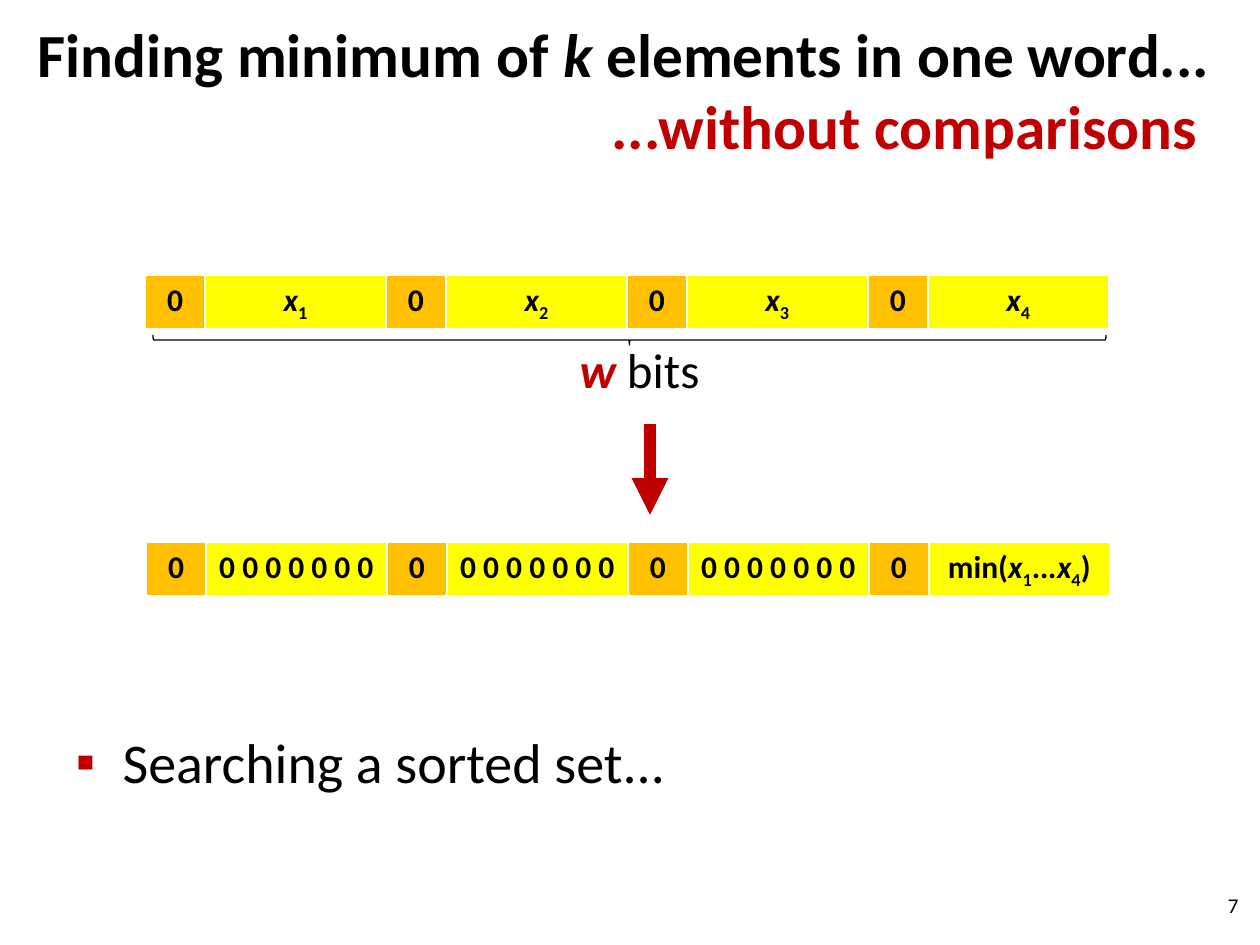
"""Build the slide on finding the minimum of k elements in one word."""
from lxml.etree import SubElement
from pptx import Presentation
from pptx.dml.color import RGBColor
from pptx.enum.shapes import MSO_CONNECTOR as Connector, MSO_SHAPE as Shape
from pptx.enum.text import MSO_ANCHOR as Anchor, MSO_AUTO_SIZE as AutoSize, PP_ALIGN as Align
from pptx.oxml.ns import qn
from pptx.util import Emu, Pt

PX_PER_INCH = 126
BLACK, WHITE, RED = "000000", "FFFFFF", "C00000"
ORANGE, YELLOW = "FFC000", "FFFF00"
FLAG_WIDTH, FIELD_WIDTH, WORD_HEIGHT = 60, 181, 52
ZERO_FIELD = [("0 0 0 0 0 0 0", {})]


def px(length):
    return Emu(round(length * 914400 / PX_PER_INCH))


def colour(value):
    return RGBColor.from_string(value)


def write(para, text, size=18, color=BLACK, bold=False, italic=False, subscript=False):
    span = para.add_run()
    span.text = text
    font = span.font
    font.name, font.size, font.bold, font.italic = "Calibri", Pt(size), bold, italic
    font.color.rgb = colour(color)
    if subscript:
        font._element.set("baseline", "-25000")


def place(box, left, top, width, height):
    box.left, box.top, box.width, box.height = map(px, (left, top, width, height))


def prepare(frame, anchor=Anchor.TOP):
    frame.word_wrap = True
    frame.auto_size = AutoSize.NONE
    frame.vertical_anchor = anchor


def add_title(page):
    title = page.shapes.title
    place(title, 25, 38, 1235, 107)
    frame = title.text_frame
    prepare(frame, Anchor.MIDDLE)
    first, second = frame.paragraphs[0], frame.add_paragraph()
    for para in (first, second):
        para.alignment = Align.LEFT
        para.line_spacing = 0.98
    for text, italic in (("Finding minimum of ", False), ("k", True),
                         (" elements in one word...", False)):
        write(first, text, size=35, bold=True, italic=italic)
    second._p.get_or_add_pPr().set("marL", str(px(574)))
    write(second, "...without comparisons", size=35, color=RED, bold=True)


def add_label(page, left, top, width, height, spans, align, anchor=Anchor.TOP):
    box = page.shapes.add_textbox(*map(px, (left, top, width, height)))
    prepare(box.text_frame, anchor)
    para = box.text_frame.paragraphs[0]
    para.alignment = align
    for text, style in spans:
        write(para, text, **style)


def add_borders(cell):
    properties = cell._tc.get_or_add_tcPr()
    for index, (side, width) in enumerate((("L", 1), ("R", 1), ("T", 1), ("B", 3))):
        line = properties.makeelement(qn(f"a:ln{side}"), {"w": str(Pt(width))})
        fill = SubElement(line, qn("a:solidFill"))
        SubElement(fill, qn("a:srgbClr"), val=WHITE)
        properties.insert(index, line)


def variable(index, name="x"):
    return [(name, {"italic": True}), (str(index), {"subscript": True})]


def add_word(page, left, top, fields):
    """Add a word as a table in which a zero flag bit precedes each field."""
    cells = [part for field in fields
             for part in (([("0", {})], FLAG_WIDTH, ORANGE), (field, FIELD_WIDTH, YELLOW))]
    width = sum(part[1] for part in cells)
    table = page.shapes.add_table(
        1, len(cells), *map(px, (left, top, width, WORD_HEIGHT))).table
    table.first_row = table.horz_banding = False
    for index, (spans, cell_width, fill) in enumerate(cells):
        table.columns[index].width = px(cell_width)
        cell = table.cell(0, index)
        cell.fill.solid()
        cell.fill.fore_color.rgb = colour(fill)
        add_borders(cell)
        para = cell.text_frame.paragraphs[0]
        para.alignment = Align.CENTER
        for text, style in spans:
            write(para, text, bold=True, **style)


def add_brace(page, left, top, width, height):
    """Add a brace that lies below a word and points down."""
    middle_x, middle_y = left + width / 2, top + height / 2
    brace = page.shapes.add_shape(Shape.LEFT_BRACE, *map(
        px, (middle_x - height / 2, middle_y - width / 2, height, width)))
    brace.rotation = 270
    brace.shadow.inherit = False
    brace.fill.background()
    brace.line.color.rgb = colour(BLACK)
    brace.line.width = Pt(0.75)


def add_arrow(page, x, top, bottom):
    arrow = page.shapes.add_connector(Connector.STRAIGHT, *map(px, (x, top, x, bottom)))
    arrow.line.color.rgb = colour(RED)
    arrow.line.width = Pt(7)
    SubElement(arrow.line._get_or_add_ln(), qn("a:tailEnd"), type="triangle")
    SubElement(arrow._element.spPr, qn("a:effectLst"))


def add_bullet(page, text):
    body = page.placeholders[1]
    place(body, 63, 721, 1134, 198)
    prepare(body.text_frame)
    para = body.text_frame.paragraphs[0]
    para.space_before = Pt(6)
    properties = para._p.get_or_add_pPr()
    properties.set("marL", str(px(47)))
    properties.set("indent", str(px(-47)))
    bullet_colour = SubElement(properties, qn("a:buClr"))
    SubElement(bullet_colour, qn("a:srgbClr"), val=RED)
    SubElement(properties, qn("a:buChar"), char="▪")
    write(para, text, size=32)


def main():
    deck = Presentation()
    deck.slide_width, deck.slide_height = px(1260), px(945)
    page = deck.slides.add_slide(deck.slide_layouts[1])
    add_title(page)
    add_label(page, 958, 880, 293, 50, [("7", {"size": 12})], Align.RIGHT, Anchor.MIDDLE)
    add_word(page, 145, 275, [variable(index) for index in range(1, 5)])
    add_brace(page, 153, 335, 953, 10)
    add_label(page, 491, 333, 297, 72,
              [("w", {"size": 28, "color": RED, "bold": True, "italic": True}),
               (" bits", {"size": 28})], Align.CENTER)
    minimum = [("min(", {}), *variable(1), ("..", {}), *variable(4, ".x"), (")", {})]
    add_word(page, 146, 542, [ZERO_FIELD] * 3 + [minimum])
    add_arrow(page, 650, 424, 515)
    add_bullet(page, "Searching a sorted set...")
    deck.save("out.pptx")


if __name__ == "__main__":
    main()
